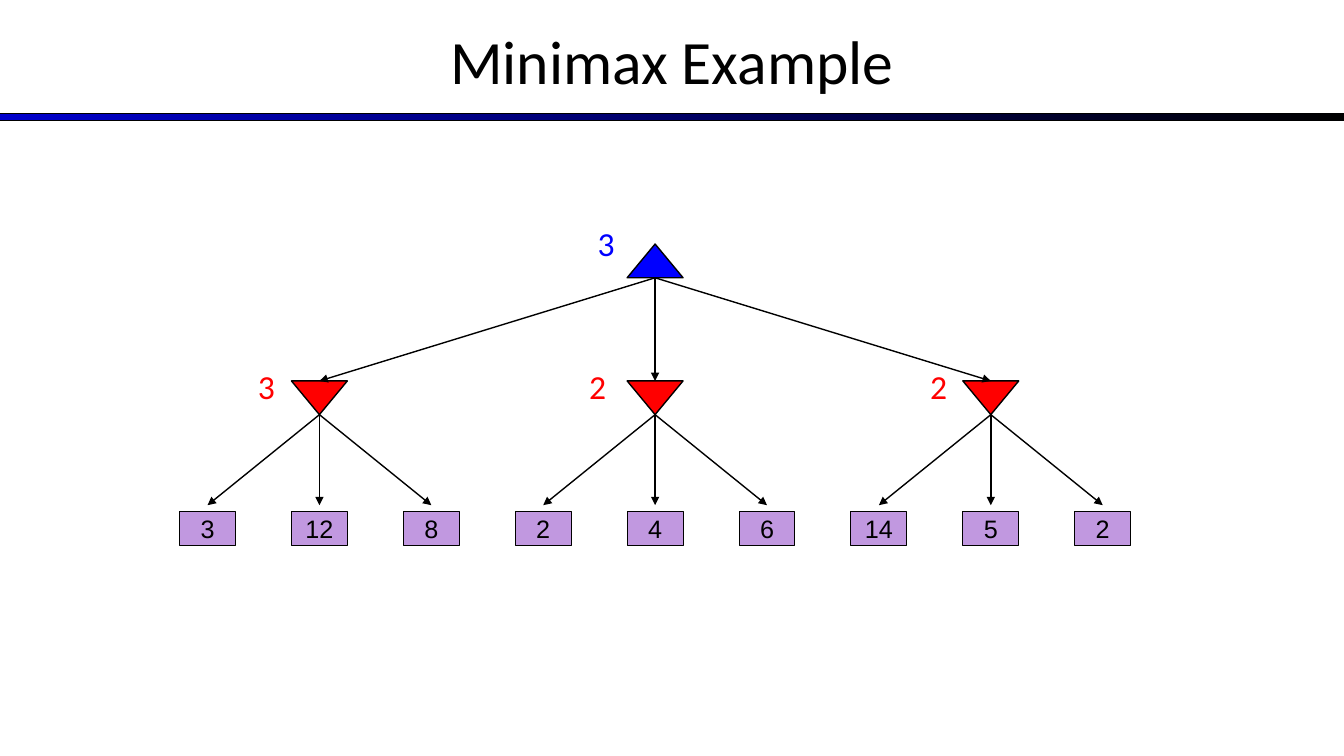
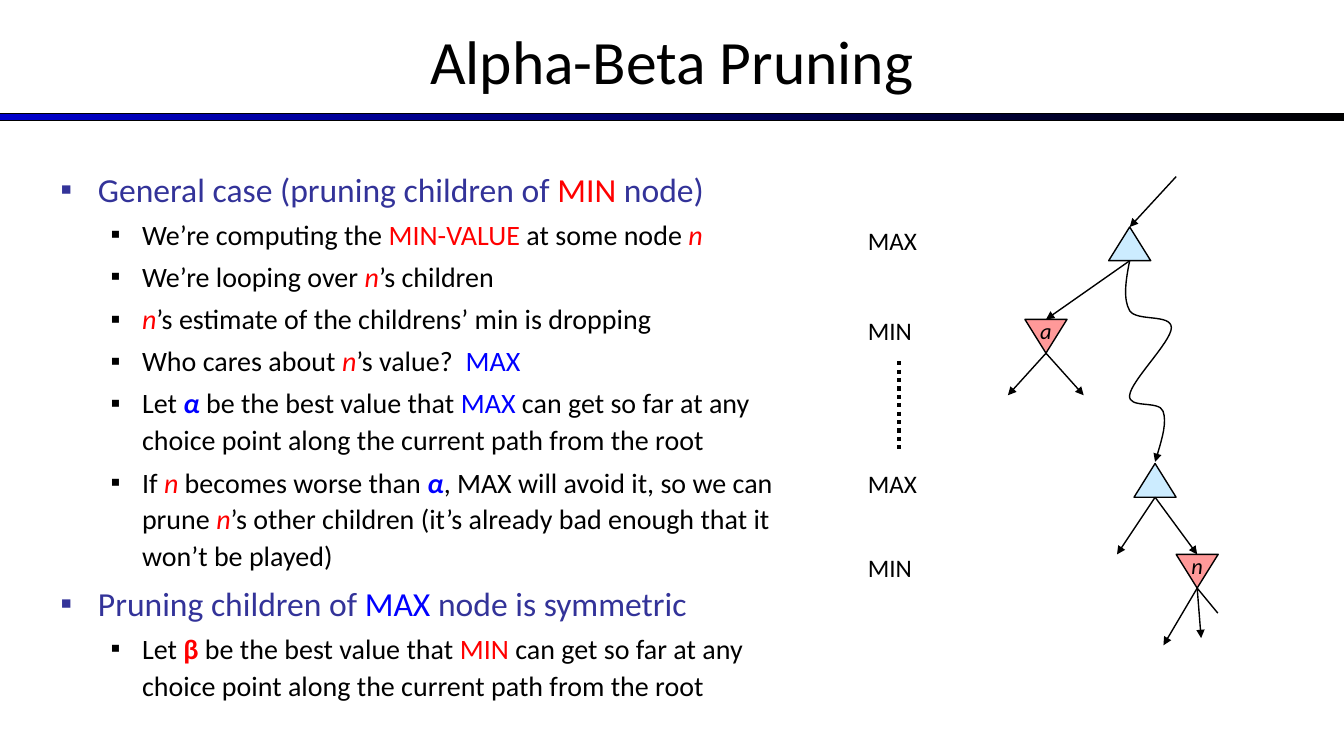
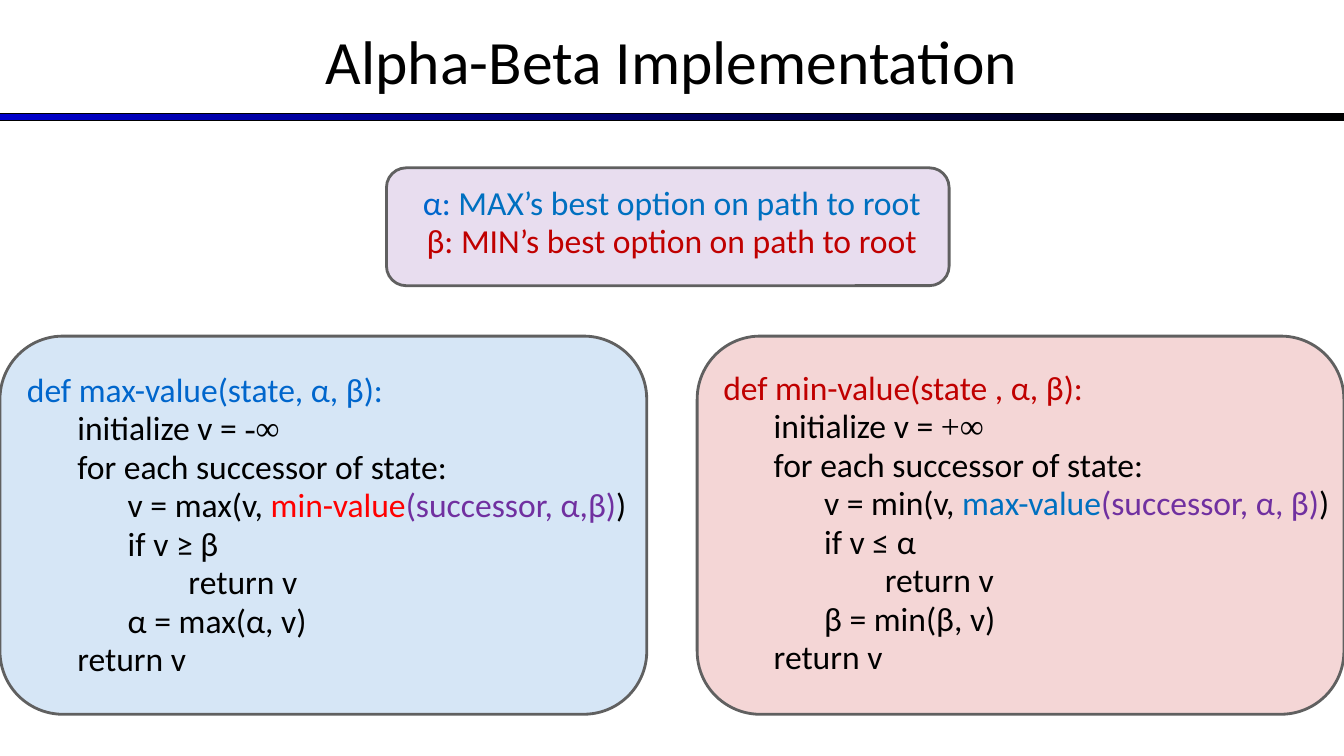
from lxml import etree
from pptx import Presentation
from pptx.dml.color import RGBColor
from pptx.enum.dml import MSO_LINE
from pptx.enum.shapes import MSO_CONNECTOR, MSO_SHAPE
from pptx.enum.text import MSO_ANCHOR, PP_ALIGN
from pptx.oxml.ns import qn
from pptx.util import Cm, Pt

RECTANGLE = MSO_SHAPE.RECTANGLE
ROUNDED = MSO_SHAPE.ROUNDED_RECTANGLE
TRIANGLE = MSO_SHAPE.ISOSCELES_TRIANGLE
STRAIGHT = MSO_CONNECTOR.STRAIGHT
DOTTED = MSO_LINE.ROUND_DOT
MIDDLE, TOP = MSO_ANCHOR.MIDDLE, MSO_ANCHOR.TOP
LEFT, CENTER = PP_ALIGN.LEFT, PP_ALIGN.CENTER

hex_color = RGBColor.from_string
BLACK, RED, BLUE, INDIGO = "000000", "FF0000", "0000FF", "333399"
CRIMSON, AZURE, SKY, PURPLE = "C00000", "0066CC", "0070C0", "7030A0"
LILAC, PINK, PALE_BLUE, GRAY = "C198E0", "FF9999", "CCECFF", "606060"
SLIDE_WIDTH = 33.87


def add_box(slide, kind, left, top, width, height, fill, line=BLACK, weight=1.0):
    box = slide.shapes.add_shape(kind, Cm(left), Cm(top), Cm(width), Cm(height))
    box.shadow.inherit = False
    box.fill.solid()
    box.fill.fore_color.rgb = hex_color(fill)
    box.line.color.rgb = hex_color(line)
    box.line.width = Pt(weight)
    return box


def add_edge(slide, start, end, head=True):
    edge = slide.shapes.add_connector(STRAIGHT, *[Cm(v) for v in (*start, *end)])
    edge.line.color.rgb = hex_color(BLACK)
    edge.line.width = Pt(1)
    if head:
        outline = edge.element.spPr.find(qn("a:ln"))
        etree.SubElement(outline, qn("a:tailEnd"), type="triangle")
    etree.SubElement(edge.element.spPr, qn("a:effectLst"))
    return edge


prs = Presentation()
prs.slide_width, prs.slide_height = Cm(SLIDE_WIDTH), Cm(19.05)

styles = {
    "title": dict(size=44, align=CENTER),
    "value": dict(size=24),
    "player": dict(size=18),
    "topic": dict(size=24, margin=0.95, indent=-0.95, spacing=1.1, before=4.4, bullet=INDIGO),
    "point": dict(size=20, margin=2.06, indent=-0.79, spacing=1.1, before=3.7, bullet=BLACK),
    "legend": dict(size=24, align=CENTER, margin=2.06, indent=-0.79, spacing=0.8, before=4.4),
    "code0": dict(size=24, margin=0.95, indent=-0.95, spacing=0.8, before=4.4),
    "code1": dict(size=24, margin=2.06, indent=-0.79, spacing=0.8, before=4.4),
    "code2": dict(size=24, margin=3.18, indent=-0.64, spacing=0.8, before=4.4),
}
texts = []

slides = []
for title in ("Minimax Example", "Alpha-Beta Pruning", "Alpha-Beta Implementation"):
    slide = prs.slides.add_slide(prs.slide_layouts[6])
    band = add_box(slide, RECTANGLE, 0, 2.86, SLIDE_WIDTH, 0.18, BLACK, weight=0.75)
    band.fill.gradient()
    band.fill.gradient_angle = 0
    for stop, color in zip(band.fill.gradient_stops, ("0000CC", BLACK)):
        stop.color.rgb = hex_color(color)
    texts.append((slide, (0, -0.08, SLIDE_WIDTH, 3.18), MIDDLE, True,
                  [("title", [(title, BLACK)])]))
    slides.append(slide)
minimax, pruning, implementation = slides

pitch, node_width, node_height = 2.82, 1.41, 0.85
first_center, root_top, min_top, leaf_top = 5.23, 6.15, 9.6, 12.9
root_center = first_center + 4 * pitch
add_box(minimax, TRIANGLE, root_center - node_width / 2, root_top,
        node_width, node_height, BLUE)
for group, leaves in enumerate(((3, 12, 8), (2, 4, 6), (14, 5, 2))):
    min_center = first_center + (3 * group + 1) * pitch
    min_node = add_box(minimax, TRIANGLE, min_center - node_width / 2, min_top,
                       node_width, node_height, RED)
    min_node.element.spPr.find(qn("a:xfrm")).set("flipV", "1")
    add_edge(minimax, (root_center, root_top + node_height), (min_center, min_top))
    for place, score in enumerate(leaves):
        center = min_center + (place - 1) * pitch
        leaf = add_box(minimax, RECTANGLE, center - node_width / 2, leaf_top,
                       node_width, node_height, LILAC, weight=0.75)
        leaf.text_frame.text = str(score)
        leaf.text_frame.word_wrap = False
        leaf.text_frame.vertical_anchor = MIDDLE
        paragraph = leaf.text_frame.paragraphs[0]
        paragraph.alignment = CENTER
        font = paragraph.runs[0].font
        font.name, font.size = "Arial", Pt(18)
        font.color.rgb = hex_color(BLACK)
        add_edge(minimax, (min_center, min_top + node_height), (center, leaf_top - 0.17))

for value, left, top, color in (("3", 14.81, 5.49, BLUE), ("3", 6.25, 9.09, RED),
                                ("2", 14.6, 9.09, RED), ("2", 23.19, 9.09, RED)):
    texts.append((minimax, (left, top, 0.94, 1.27), TOP, False,
                  [("value", [(value, color)])]))

for player, top in (("MAX", 5.54), ("MIN", 7.82), ("MAX", 11.68), ("MIN", 13.79)):
    texts.append((pruning, (21.62, top, 1.75, 1.02), MIDDLE, False,
                  [("player", [(player, BLACK)])]))

for name, left, top in (("", 27.94, 5.72), ("a", 25.83, 8.05),
                        ("", 28.58, 11.68), ("n", 29.64, 13.97)):
    node = add_box(pruning, TRIANGLE, left, top, 1.06, node_height,
                   PINK if name else PALE_BLUE)
    if name:
        node.element.spPr.find(qn("a:xfrm")).set("flipV", "1")
        frame = node.text_frame
        frame.text = name
        frame.word_wrap = False
        frame.vertical_anchor = MIDDLE
        frame.margin_top = Cm(0.25)
        node.element.txBody.find(qn("a:bodyPr")).set("rot", "10800000")
        paragraph = frame.paragraphs[0]
        paragraph.alignment = CENTER
        font = paragraph.runs[0].font
        font.name, font.size, font.italic = "Calibri", Pt(16), True
        font.color.rgb = hex_color(BLACK)

upper_max, node_a = (28.47, 6.57), (26.36, 8.9)
lower_max, node_n = (29.11, 12.53), (30.17, 14.82)
for start, end in (((29.64, 4.45), (28.47, 5.72)), (upper_max, (26.36, 8.05)),
                   (node_a, (25.4, 9.96)), (node_a, (27.31, 9.96)),
                   (lower_max, (28.15, 13.97)), (lower_max, (30.17, 13.97)),
                   (node_n, (29.32, 16.26)), (node_n, (30.27, 16.08))):
    add_edge(pruning, start, end)
add_edge(pruning, node_n, (30.69, 15.45), head=False)
omitted_levels = add_edge(pruning, (22.65, 9.1), (22.65, 11.43), head=False)
omitted_levels.line.width = Pt(3)
omitted_levels.line.dash_style = DOTTED

curve_points = [(28.37, 7.06), (28.3, 7.54), (28.47, 7.83),
                (28.65, 8.11), (29.52, 7.9), (29.52, 8.26),
                (29.52, 8.61), (28.5, 9.6), (28.47, 9.96),
                (28.42, 10.31), (29.21, 10.08), (29.31, 10.36),
                (29.41, 10.64), (29.26, 11.15), (29.11, 11.64)]
builder = pruning.shapes.build_freeform(Cm(upper_max[0]), Cm(upper_max[1]))
builder.add_line_segments([(Cm(x), Cm(y)) for x, y in curve_points], close=False)
long_descent = builder.convert_to_shape()
long_descent.shadow.inherit = False
long_descent.fill.background()
long_descent.line.color.rgb = hex_color(BLACK)
long_descent.line.width = Pt(1)
etree.SubElement(long_descent.element.spPr.find(qn("a:ln")), qn("a:tailEnd"), type="triangle")
steps = list(long_descent.element.iter(qn("a:lnTo")))
track = steps[0].getparent()
for first in range(0, len(steps), 3):
    bend = etree.SubElement(track, qn("a:cubicBezTo"))
    for step in steps[first:first + 3]:
        bend.append(step[0])
        track.remove(step)

texts.append((pruning, (1.27, 4.02, 19.05, 15.03), TOP, True, [
    ("topic", [("General case (pruning children of ", INDIGO), ("MIN", RED),
               (" node)", INDIGO)]),
    ("point", [("We’re computing the ", BLACK), ("MIN-VALUE ", RED),
               ("at some node ", BLACK), ("n", RED, "i")]),
    ("point", [("We’re looping over ", BLACK), ("n", RED, "i"), ("’s children", BLACK)]),
    ("point", [("n", RED, "i"), ("’s estimate of the childrens’ min is dropping", BLACK)]),
    ("point", [("Who cares about ", BLACK), ("n", RED, "i"), ("’s value?  ", BLACK),
               ("MAX", BLUE)]),
    ("point", [("Let ", BLACK), ("α", BLUE, "bi"), (" be the best value that ", BLACK),
               ("MAX", BLUE),
               (" can get so far at any choice point along the current path from the root",
                BLACK)]),
    ("point", [("If ", BLACK), ("n", RED, "i"), (" becomes worse than ", BLACK),
               ("α", BLUE, "bi"), (", MAX will avoid it, so we can prune ", BLACK),
               ("n", RED, "i"),
               ("’s other children (it’s already bad enough that it won’t be played)",
                BLACK)]),
    ("topic", [("Pruning children of ", INDIGO), ("MAX", BLUE),
               (" node is symmetric", INDIGO)]),
    ("point", [("Let ", BLACK), ("β", RED, "b"), (" be the best value that ", BLACK),
               ("MIN", RED),
               (" can get so far at any choice point along the current path from the root",
                BLACK)]),
]))

for left, top, width, height, color in ((17.57, 8.47, 16.3, 9.53, CRIMSON),
                                        (0, 8.47, 16.3, 9.53, AZURE),
                                        (9.74, 4.23, 14.18, 2.97, PURPLE)):
    panel = add_box(implementation, ROUNDED, left, top, width, height, color, GRAY, 2)
    tint = panel.element.spPr.find(qn("a:solidFill"))[0]
    etree.SubElement(tint, qn("a:alpha"), val="16000")

texts.append((implementation, (0, 4.65, 32.59, 2.5), TOP, True, [
    ("legend", [("α: ", AZURE), ("MAX’s best option on path to root", SKY)]),
    ("legend", [("β: MIN’s best option on path to root", CRIMSON)]),
]))
for left, top, header, color, limit, own, other, other_color, arguments, test, update in (
        (17.98, 9.32, "def min-value(state , α, β):", CRIMSON, "+∞", "min", "max-value",
         SKY, "(successor, α, β)", "if v ≤ α", "β = min(β, v)"),
        (0.43, 9.37, "def max-value(state, α, β):", AZURE, "-∞", "max", "min-value",
         RED, "(successor, α,β)", "if v ≥ β", "α = max(α, v)")):
    texts.append((implementation, (left, top, 16.3, 8), TOP, True, [
        ("code0", [(header, color)]),
        ("code1", [("initialize v = ", BLACK), (limit, BLACK, "t")]),
        ("code1", [("for each successor of state:", BLACK)]),
        ("code2", [(f"v = {own}(v, ", BLACK), (other, other_color), (arguments, PURPLE),
                   (")", BLACK)]),
        ("code2", [(test, BLACK)]),
        ("code2", [("        return v", BLACK)]),
        ("code2", [(update, BLACK)]),
        ("code1", [("return v", BLACK)]),
    ]))

for slide, place, anchor, wrap, paragraphs in texts:
    frame = slide.shapes.add_textbox(*[Cm(v) for v in place]).text_frame
    frame.word_wrap = wrap
    frame.vertical_anchor = anchor
    for number, (style_name, parts) in enumerate(paragraphs):
        style = styles[style_name]
        paragraph = frame.add_paragraph() if number else frame.paragraphs[0]
        properties = paragraph._p.get_or_add_pPr()
        properties.set("marL", str(Cm(style.get("margin", 0))))
        properties.set("indent", str(Cm(style.get("indent", 0))))
        if "bullet" in style:
            bullet_color = etree.SubElement(properties, qn("a:buClr"))
            etree.SubElement(bullet_color, qn("a:srgbClr"), val=style["bullet"])
            etree.SubElement(properties, qn("a:buFont"), typeface="Arial")
            etree.SubElement(properties, qn("a:buChar"), char="▪")
        paragraph.alignment = style.get("align", LEFT)
        paragraph.line_spacing = style.get("spacing", 1.0)
        paragraph.space_before = Pt(style.get("before", 0) if number else 0)
        for words, color, *marks in parts:
            flags = "".join(marks)
            run = paragraph.add_run()
            run.text = words
            run.font.name = "Times New Roman" if "t" in flags else "Calibri"
            run.font.size = Pt(style["size"])
            run.font.bold, run.font.italic = "b" in flags, "i" in flags
            run.font.color.rgb = hex_color(color)

prs.save("out.pptx")
